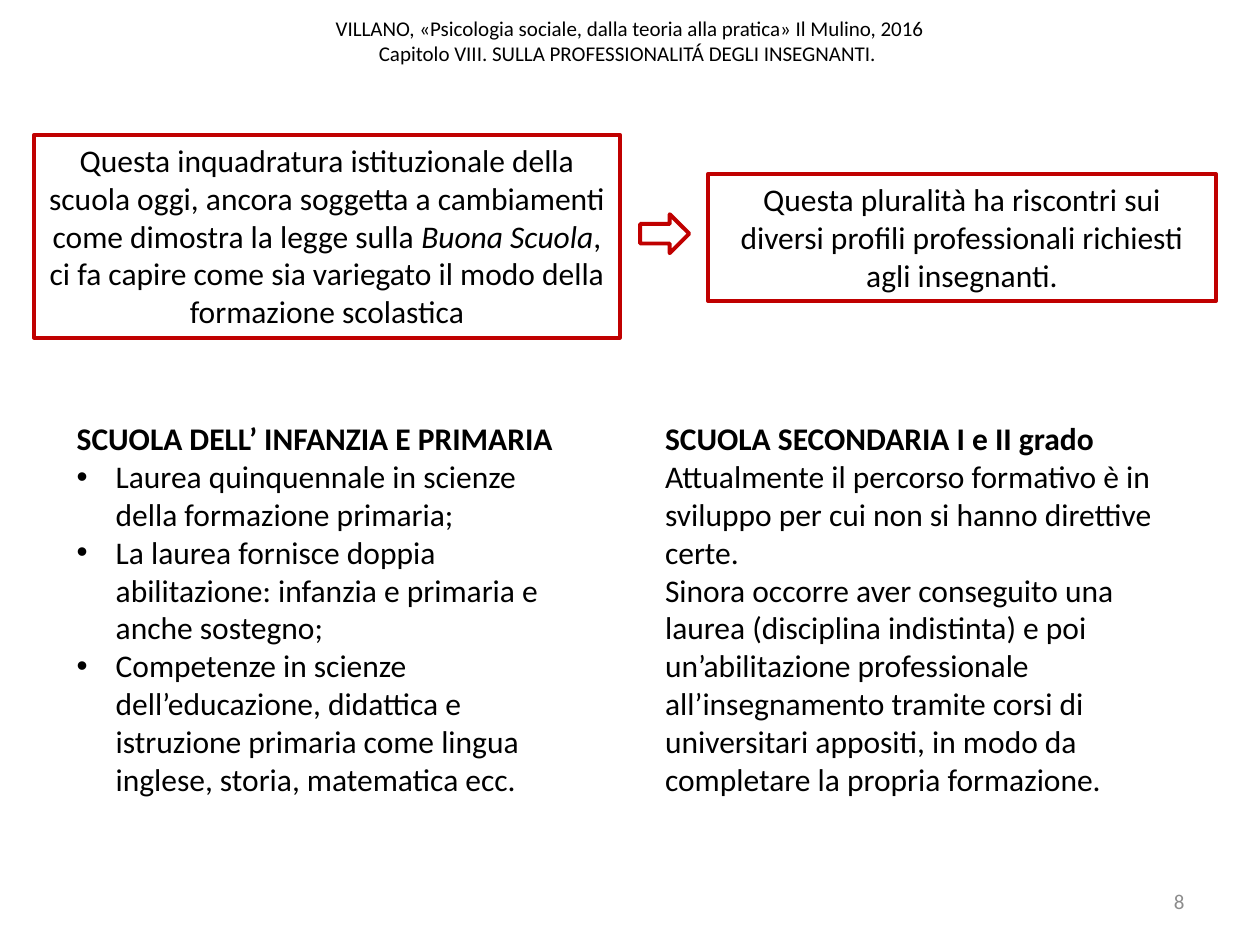
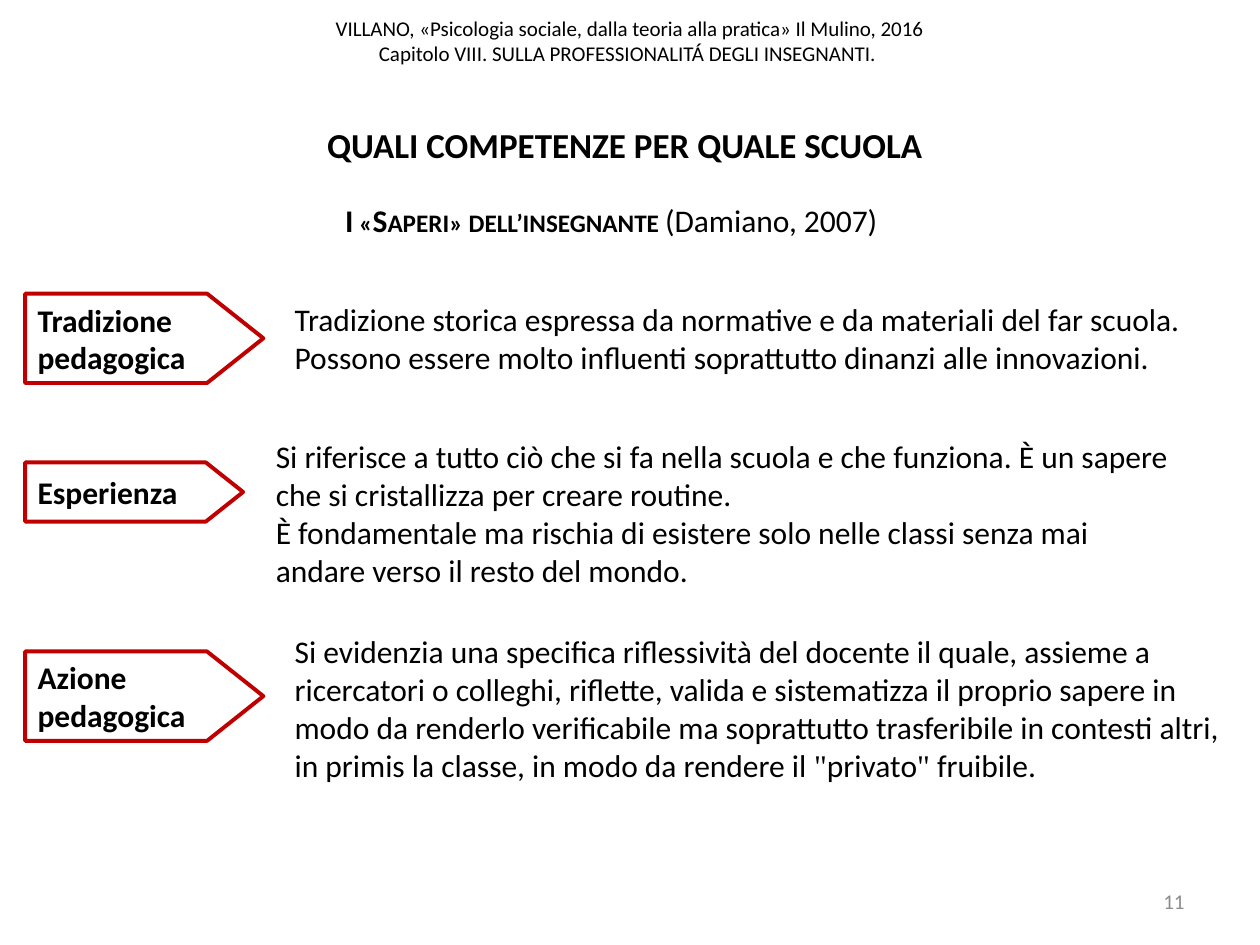
"""Build two slides on the training and the knowledge of teachers."""
import lxml.etree
import pptx
import pptx.dml.color
import pptx.enum.shapes
import pptx.enum.text
import pptx.oxml.ns
import pptx.util

Inches = pptx.util.Inches
SHAPE = pptx.enum.shapes.MSO_SHAPE
ALIGN = pptx.enum.text.PP_ALIGN
ANCHOR = pptx.enum.text.MSO_ANCHOR
COLORS = {"text": "000000", "edge": "C00000", "page": "8C8C8C"}
FONT = "Calibri"
QUOTE = ('"', {"face": "Times New Roman"})
HEADER = ("VILLANO, «Psicologia sociale, dalla teoria alla pratica» Il Mulino, 2016\v"
          "Capitolo VIII. SULLA PROFESSIONALITÁ DEGLI INSEGNANTI. ")


def rgb(name):
    return pptx.dml.color.RGBColor.from_string(COLORS[name])


def style(run, size, color, bold=False, italic=False, small=False, face=FONT):
    font = run.font
    font.name, font.size = face, pptx.util.Pt(size)
    font.bold, font.italic = bold, italic
    font.color.rgb = rgb(color)
    if small:
        run._r.get_or_add_rPr().set("cap", "small")


def bullet(para):
    props = para._p.get_or_add_pPr()
    props.set("marL", str(Inches(0.31)))
    props.set("indent", str(-Inches(0.31)))
    for tag, key, value in (("a:buFont", "typeface", "Arial"), ("a:buChar", "char", "•")):
        lxml.etree.SubElement(props, pptx.oxml.ns.qn(tag)).set(key, value)


def write(shape, paras, size=18, color="text", align=ALIGN.LEFT,
          anchor=ANCHOR.TOP, bold=False, dots=False):
    """Fill a shape; a paragraph is a string or a list of (text, format) parts."""
    frame = shape.text_frame
    frame.word_wrap = True
    frame.vertical_anchor = anchor
    for index, parts in enumerate(paras):
        para = frame.paragraphs[0] if index == 0 else frame.add_paragraph()
        para.alignment = align
        if dots and index:
            bullet(para)
        if isinstance(parts, str):
            para.text = parts
            for run in para.runs:
                style(run, size, color, bold)
            continue
        for text, look in parts:
            run = para.add_run()
            run.text = text
            style(run, size, color, **look)


def label(slide, area, paras, **look):
    box = slide.shapes.add_textbox(*map(Inches, area))
    write(box, paras, **look)


def outline(slide, kind, area):
    shape = slide.shapes.add_shape(kind, *map(Inches, area))
    shape.shadow.inherit = False
    shape.fill.background()
    shape.line.color.rgb = rgb("edge")
    shape.line.width = pptx.util.Pt(2.25)
    return shape


def frame(slide, area, paras):
    write(outline(slide, SHAPE.RECTANGLE, area), paras, align=ALIGN.CENTER)


def tag(slide, area, text):
    shape = outline(slide, SHAPE.PENTAGON, area)
    shape.adjustments[0] = 0.63
    write(shape, [text], bold=True, anchor=ANCHOR.MIDDLE)


def start(deck, page):
    """Add a blank slide with the shared header and page number."""
    slide = deck.slides.add_slide(deck.slide_layouts[6])
    label(slide, (0, -0.11, 10, 0.87), [HEADER], size=12,
          align=ALIGN.CENTER, anchor=ANCHOR.MIDDLE)
    label(slide, (7.17, 6.95, 2.33, 0.4), [page], size=12, color="page",
          align=ALIGN.RIGHT, anchor=ANCHOR.MIDDLE)
    return slide


def schools(deck):
    slide = start(deck, "8")
    frame(slide, (0.27, 1.07, 4.65, 1.61), [[
        ("Questa inquadratura istituzionale della scuola oggi, ancora soggetta a "
         "cambiamenti come dimostra la legge sulla ", {}),
        ("Buona Scuola", {"italic": True}),
        (", ci fa capire come sia variegato il modo della formazione scolastica", {})]])
    frame(slide, (5.62, 1.38, 4.03, 1.01), [
        "Questa pluralità ha riscontri sui diversi profili professionali richiesti "
        "agli insegnanti."])
    outline(slide, SHAPE.RIGHT_ARROW, (5.08, 1.7, 0.39, 0.31))
    label(slide, (0.51, 3.28, 4.02, 3.13), [
        [("SCUOLA DELL’ INFANZIA E PRIMARIA", {"bold": True})],
        "Laurea quinquennale in scienze della formazione primaria;",
        "La laurea fornisce doppia abilitazione: infanzia e primaria e anche sostegno;",
        "Competenze in scienze dell’educazione, didattica e istruzione primaria come "
        "lingua inglese, storia, matematica ecc."], dots=True)
    label(slide, (5.18, 3.28, 4.32, 3.43), [
        [("SCUOLA SECONDARIA I e II grado", {"bold": True})],
        "Attualmente il percorso formativo è in sviluppo per cui non si hanno "
        "direttive certe.",
        "Sinora occorre aver conseguito una laurea (disciplina indistinta) e poi "
        "un’abilitazione professionale all’insegnamento tramite corsi di universitari "
        "appositi, in modo da completare la propria formazione."])


def skills(deck):
    slide = start(deck, "11")
    label(slide, (1.69, 0.93, 6.54, 0.44), ["QUALI COMPETENZE PER QUALE SCUOLA"],
          size=20, bold=True, align=ALIGN.CENTER)
    label(slide, (2.64, 1.55, 5.04, 0.4), [[
        ("I «Saperi» dell’insegnante ", {"bold": True, "small": True}),
        ("(Damiano, 2007)", {})]])
    rows = [
        ("Tradizione pedagogica", (0.2, 2.33, 1.89, 0.71), (2.24, 2.33, 7.4, 0.71), [
            "Tradizione storica espressa da normative e da materiali del far scuola. "
            "Possono essere molto influenti soprattutto dinanzi alle innovazioni."]),
        ("Esperienza", (0.2, 3.67, 1.73, 0.47), (2.09, 3.42, 7.41, 1.31), [
            "Si riferisce a tutto ciò che si fa nella scuola e che funziona. È un "
            "sapere che si cristallizza per creare routine.",
            "È fondamentale ma rischia di esistere solo nelle classi senza mai andare "
            "verso il resto del mondo."]),
        ("Azione pedagogica", (0.2, 5.17, 1.89, 0.71), (2.24, 4.97, 7.56, 1.31), [[
            ("Si evidenzia una specifica riflessività del docente il quale, assieme a "
             "ricercatori o colleghi, riflette, valida e sistematizza il proprio sapere "
             "in modo da renderlo verificabile ma soprattutto trasferibile in contesti "
             "altri, in primis la classe, in modo da rendere il ", {}),
            QUOTE, ("privato", {}), QUOTE, (" fruibile.", {})]]),
    ]
    for name, place, area, paras in rows:
        tag(slide, place, name)
        label(slide, area, paras)


def main():
    deck = pptx.Presentation()
    deck.slide_width, deck.slide_height = Inches(10), Inches(7.5)
    schools(deck)
    skills(deck)
    deck.save("out.pptx")


if __name__ == "__main__":
    main()
